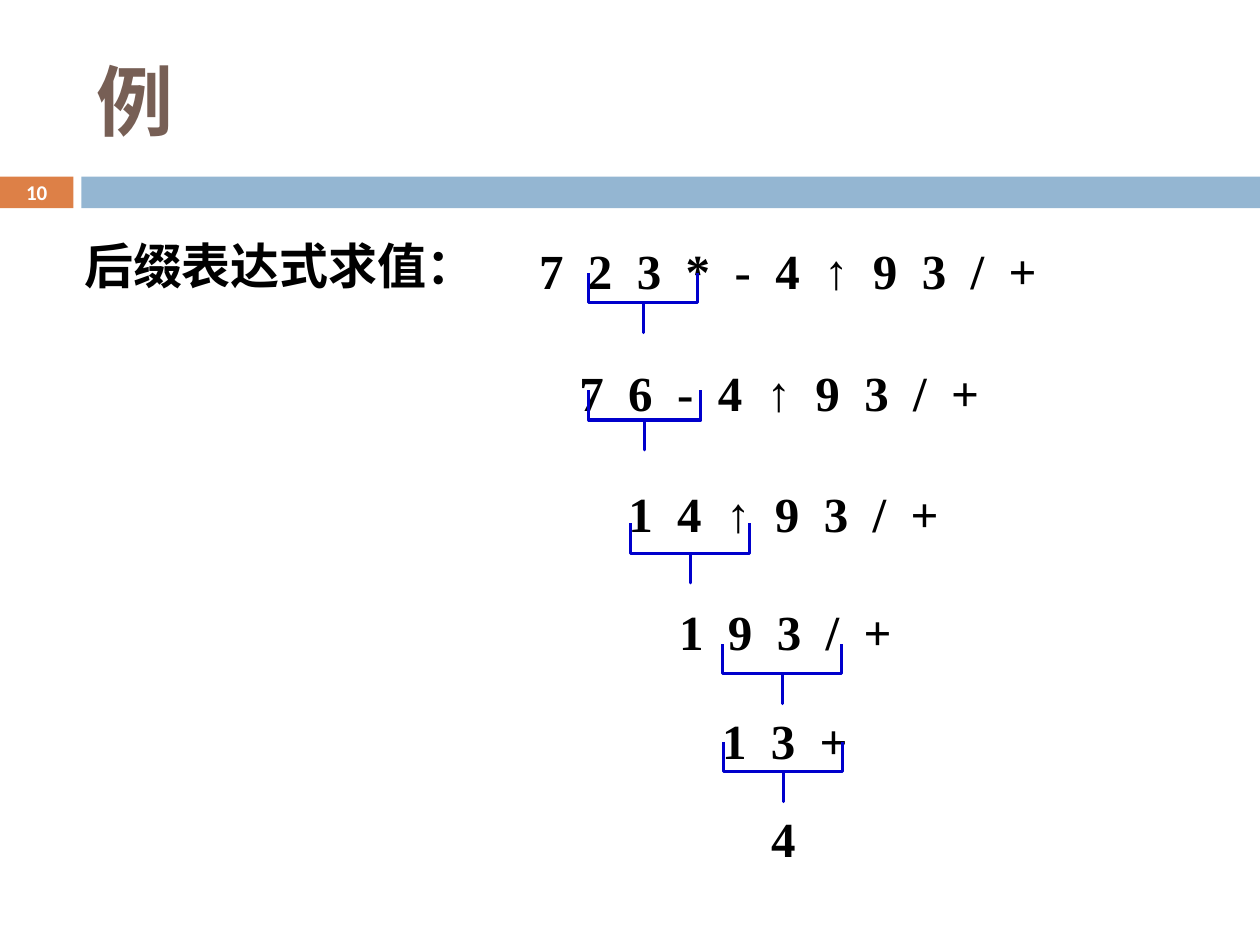
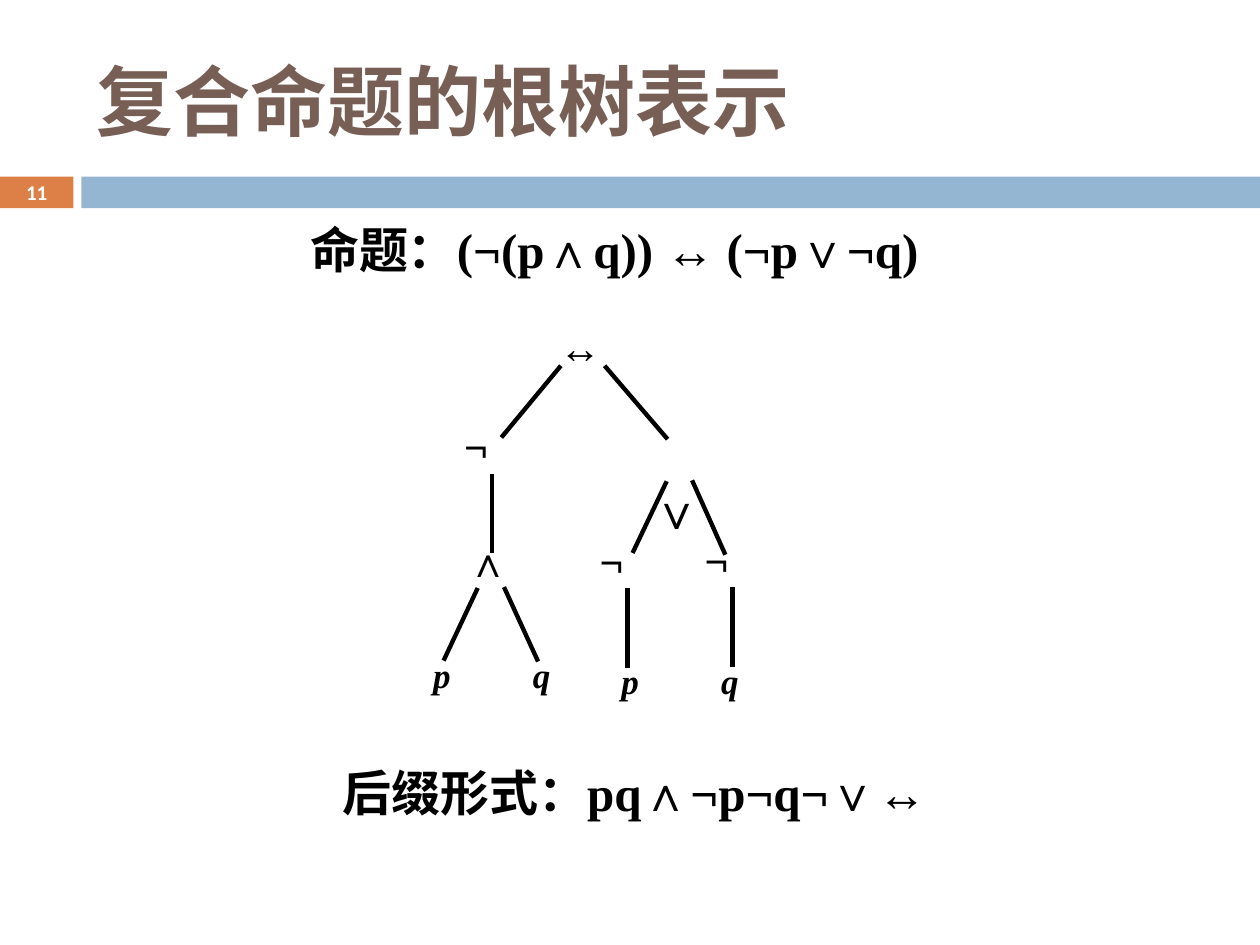
from lxml.etree import SubElement
from pptx import Presentation
from pptx.dml.color import RGBColor
from pptx.enum.shapes import MSO_CONNECTOR as Conn, MSO_SHAPE as Kind
from pptx.enum.text import MSO_ANCHOR as Anchor, PP_ALIGN as Align
from pptx.oxml.ns import qn
from pptx.util import Pt

BLACK = RGBColor(0, 0, 0)
WHITE = RGBColor(255, 255, 255)
BROWN = RGBColor(0x77, 0x5F, 0x55)
ORANGE = RGBColor(0xDD, 0x80, 0x47)
SKY = RGBColor(0x94, 0xB6, 0xD2)
BLUE = RGBColor(0, 0, 0xCC)
SANS, SERIF = "Calibri", "Times New Roman"
WIDE, HIGH = 720, 540

HEAD = "后缀表达式求值："
# expression, left, top
STEPS = [
    ("7 2 3 * - 4 ↑ 9 3 / +", 301, 127),
    ("7 6 - 4 ↑ 9 3 / +", 324, 197),
    ("1 4 ↑ 9 3 / +", 352, 266),
    ("1 9 3 / +", 381, 333.5),
    ("1 3 +", 405.5, 395.5),
    ("4", 433.5, 452),
]
# centre x, centre y, span
BRACES = [
    (367.5, 173, 62.5),
    (368.5, 240, 64),
    (394.5, 316, 68),
    (447, 385, 68),
    (447.5, 441, 68),
]
BRACE_H = 34

# text, centre x, top, width
FORMS = [
    ("命题：(¬(p∧q)) ↔ (¬p∨¬q)", 351, 115, 663),
    ("后缀形式：pq∧¬p¬q¬∨↔", 362.5, 425.5, 663),
]
SIGN = dict(size=24)
LEAF = dict(size=20, slant=True)
# symbol, centre x, top, format
NODES = [
    ("↔", 331.5, 180, SIGN),
    ("¬", 272, 237, SIGN),
    ("∨", 387, 271, dict(size=28, bold=False)),
    ("∧", 279, 302.5, SIGN),
    ("¬", 349.5, 302.5, SIGN),
    ("¬", 409.5, 302, SIGN),
    ("p", 252.5, 370, LEAF),
    ("q", 309.5, 370, LEAF),
    ("p", 360, 373.5, LEAF),
    ("q", 417, 373.5, LEAF),
]
NODE_W, NODE_H = 60, 29
# x and y of the upper end, then of the lower end
EDGES = [
    (320.5, 209, 286.5, 250), (345.5, 209, 381.5, 251),
    (281, 271, 281, 316),
    (273, 336, 253.5, 377.5), (288, 335.5, 307.5, 378),
    (381, 275, 361.5, 316), (395.5, 274.5, 414.5, 317),
    (358.5, 336, 358.5, 382), (418.5, 335.5, 418.5, 381),
]


def fill(frame, text, size=28, font=SERIF, color=BLACK, bold=True, slant=False,
         align=Align.LEFT, anchor=Anchor.TOP, wrap=True, line=1, before=0, track=0):
    """Write one paragraph; track widens each letter by that many points."""
    frame.word_wrap = wrap
    frame.vertical_anchor = anchor
    para = frame.paragraphs[0]
    para.alignment = align
    para.line_spacing = line
    para.space_before = Pt(before)
    run = para.add_run()
    run.text = text
    face = run.font
    face.name, face.size = font, Pt(size)
    face.bold, face.italic = bold, slant
    face.color.rgb = color
    if track:
        run._r.get_or_add_rPr().set("spc", str(round(track * 100)))


def label(slide, text, left, top, width, height, **form):
    box = slide.shapes.add_textbox(Pt(left), Pt(top), Pt(width), Pt(height))
    fill(box.text_frame, text, **form)


def band(slide, left, width, color):
    bar = slide.shapes.add_shape(Kind.RECTANGLE, Pt(left), Pt(101), Pt(width), Pt(18))
    bar.shadow.inherit = False
    bar.fill.solid()
    bar.fill.fore_color.rgb = color
    bar.line.fill.background()
    return bar


def page(deck, title, number):
    slide = deck.slides.add_slide(deck.slide_layouts[5])
    head = slide.shapes.title
    head.left, head.top, head.width, head.height = Pt(48), Pt(18), Pt(642), Pt(78)
    fill(head.text_frame, title, size=44, font=SANS, color=BROWN, anchor=Anchor.MIDDLE)
    tab = band(slide, 0, 42, ORANGE)
    fill(tab.text_frame, str(number), size=12, font=SANS, color=WHITE,
         align=Align.CENTER, anchor=Anchor.MIDDLE)
    band(slide, 46.5, WIDE - 46.5, SKY)
    return slide


def brace(slide, mid_x, mid_y, span):
    """Draw a brace that opens upward: a left brace turned by 270 degrees."""
    mark = slide.shapes.add_shape(
        Kind.LEFT_BRACE, Pt(mid_x - BRACE_H / 2), Pt(mid_y - span / 2),
        Pt(BRACE_H), Pt(span))
    mark.rotation = 270
    mark.adjustments[0], mark.adjustments[1] = 0, 0.5
    mark.shadow.inherit = False
    mark.fill.background()
    mark.line.color.rgb = BLUE
    mark.line.width = Pt(1.75)


def edge(slide, *ends):
    line = slide.shapes.add_connector(Conn.STRAIGHT, *map(Pt, ends))
    line.line.color.rgb = BLACK
    line.line.width = Pt(2.5)
    SubElement(line._element.spPr, qn("a:effectLst"))


def main():
    deck = Presentation()
    deck.slide_width, deck.slide_height = Pt(WIDE), Pt(HIGH)

    slide = page(deck, "例", 10)
    label(slide, HEAD, 41, 131, 240, 41, font=SANS, wrap=False)
    for text, left, top in STEPS:
        label(slide, text, left, top, 325, 45, line=1.2, before=6, track=3.5, wrap=False)
    for spot in BRACES:
        brace(slide, *spot)

    slide = page(deck, "复合命题的根树表示", 11)
    for text, mid, top, width in FORMS:
        label(slide, text, mid - width / 2, top, width, 51,
              align=Align.CENTER, line=1.2, before=6)
    for ends in EDGES:
        edge(slide, *ends)
    for text, mid, top, form in NODES:
        label(slide, text, mid - NODE_W / 2, top, NODE_W, NODE_H,
              align=Align.CENTER, **form)

    deck.save("out.pptx")


if __name__ == "__main__":
    main()
